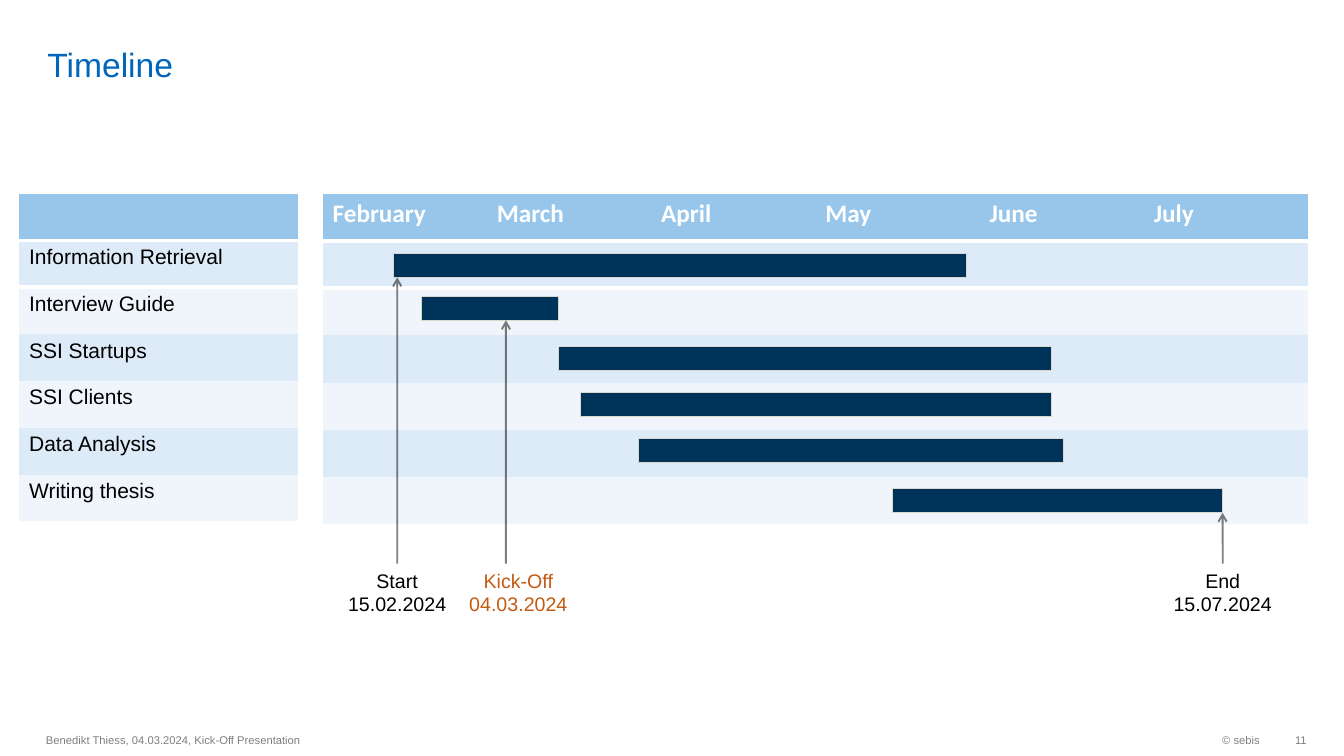
from dataclasses import dataclass

from lxml import etree
from pptx import Presentation
from pptx.dml import color
from pptx.enum import shapes, text
from pptx.oxml import ns
from pptx.util import Cm, Pt

# Content: places and sizes in centimetres
TITLE = "Timeline"
MONTHS = ["February", "March", "April", "May", "June", "July"]
TASKS = [  # name, bar left, bar top, bar width
    ("Information Retrieval", 9.91, 6.39, 14.45),
    ("Interview Guide", 10.62, 7.47, 3.45),
    ("SSI Startups", 14.07, 8.74, 12.42),
    ("SSI Clients", 14.62, 9.9, 11.88),
    ("Data Analysis", 16.08, 11.05, 10.72),
    ("Writing thesis", 22.5, 12.32, 8.31),
]
MILESTONES = [  # lines, label left, label width, arrow x, task pointed at, colour
    (["Start", "15.02.2024"], 8.36, 3.3, 10.01, 0, "ink"),
    (["End", "15.07.2024"], 28.95, 3.73, 30.81, 5, "ink"),
    (["Kick-Off 04.03.2024"], 11.2, 3.73, 12.75, 1, "accent"),
]
FOOTERS = [  # text, left, width, alignment, right inset
    ("© sebis", 26.06, 5.94, text.PP_ALIGN.RIGHT, 0.25),
    ("Benedikt Thiess, 04.03.2024, Kick-Off Presentation",
     0.91, 16, text.PP_ALIGN.LEFT, 0.25),
    ("11", 32, 0.93, text.PP_ALIGN.RIGHT, 0),
]

# Layout
TABLE_TOP = 4.88
BAR_HEIGHT = 0.6
LABEL_TOP = 14.2
PLAIN_TABLE = "{2D5ABB26-0587-4C30-8999-92F81FD0307C}"


@dataclass(frozen=True)
class Theme:
    font: str = "Arial"
    header_font: str = "Calibri"
    title: str = "0065BD"
    ink: str = "000000"
    accent: str = "C55A11"
    grey: str = "7F7F7F"
    white: str = "FFFFFF"
    header: str = "98C6EA"
    bands: tuple = ("DDEAF7", "EFF5FB")
    bar: str = "003359"
    bar_line: str = "DAD7CB"
    title_size: int = 24
    header_size: int = 18
    task_size: int = 15
    label_size: int = 14
    footer_size: int = 8


THEME = Theme()


def rgb(value):
    return color.RGBColor.from_string(value)


def style(frame, size, ink, align=text.PP_ALIGN.LEFT, name=THEME.font, bold=False):
    for para in frame.paragraphs:
        para.alignment = align
        for span in para.runs:
            font = span.font
            font.name, font.size, font.bold = name, Pt(size), bold
            font.color.rgb = rgb(ink)


def add_box(page, lines, left, top, width, height):
    box = page.shapes.add_textbox(Cm(left), Cm(top), Cm(width), Cm(height))
    box.text_frame.word_wrap = True
    box.text_frame.text = "\n".join(lines)
    return box


def add_border(cell, side, width):
    line = etree.SubElement(cell._tc.get_or_add_tcPr(), ns.qn(f"a:{side}"), w=str(Pt(width)))
    fill = etree.SubElement(line, ns.qn("a:solidFill"))
    etree.SubElement(fill, ns.qn("a:srgbClr"), val=THEME.white)


def add_grid(page, rows, left, column_width, row_height):
    """Banded table with a header row above a thick white rule."""
    count = len(rows[0])
    table = page.shapes.add_table(
        len(rows), count, Cm(left), Cm(TABLE_TOP),
        Cm(column_width * count), Cm(row_height * len(rows))).table
    table._tbl.tblPr.find(ns.qn("a:tableStyleId")).text = PLAIN_TABLE
    for index, values in enumerate(rows):
        table.rows[index].height = Cm(row_height)
        for column, value in enumerate(values):
            cell = table.cell(index, column)
            if value:
                cell.text = value
            if index == 0:
                add_border(cell, "lnB", 3)
                style(cell.text_frame, THEME.header_size, THEME.white,
                      name=THEME.header_font, bold=True)
            else:
                if index == 1:
                    add_border(cell, "lnT", 3)
                style(cell.text_frame, THEME.task_size, THEME.ink)
            cell.fill.solid()
            cell.fill.fore_color.rgb = rgb(THEME.bands[(index - 1) % 2] if index else THEME.header)


def add_bar(page, left, top, width):
    bar = page.shapes.add_shape(shapes.MSO_SHAPE.RECTANGLE,
                                Cm(left), Cm(top), Cm(width), Cm(BAR_HEIGHT))
    bar.shadow.inherit = False
    bar.fill.solid()
    bar.fill.fore_color.rgb = rgb(THEME.bar)
    bar.line.color.rgb = rgb(THEME.bar_line)
    bar.line.width = Pt(0.75)


def add_arrow(page, x, start, end):
    arrow = page.shapes.add_connector(shapes.MSO_CONNECTOR.STRAIGHT,
                                      Cm(x), Cm(start), Cm(x), Cm(end))
    arrow.line.color.rgb = rgb(THEME.ink)
    arrow.line.width = Pt(1.35)
    line = arrow.line._ln
    shade = line.find(".//" + ns.qn("a:srgbClr"))
    etree.SubElement(shade, ns.qn("a:alpha"), val="50000")
    etree.SubElement(line, ns.qn("a:tailEnd"), type="arrow")
    etree.SubElement(arrow._element.spPr, ns.qn("a:effectLst"))
    return arrow


def main():
    deck = Presentation()
    deck.slide_width, deck.slide_height = Cm(33.87), Cm(19.05)
    page = deck.slides.add_slide(deck.slide_layouts[5])

    # Title
    title = page.shapes.title
    title.left, title.top, title.width, title.height = Cm(0.94), Cm(0.13), Cm(29.41), Cm(2)
    frame = title.text_frame
    frame.text = TITLE
    frame.vertical_anchor = text.MSO_ANCHOR.BOTTOM
    frame.margin_top = frame.margin_bottom = 0
    style(frame, THEME.title_size, THEME.title)

    # Footer
    for words, left, width, align, inset in FOOTERS:
        frame = add_box(page, [words], left, 18.25, width, 0.81).text_frame
        frame.vertical_anchor = text.MSO_ANCHOR.MIDDLE
        frame.margin_right = Cm(inset)
        style(frame, THEME.footer_size, THEME.grey, align)

    # Month grid and task list
    add_grid(page, [MONTHS] + [[""] * len(MONTHS) for _ in TASKS], 8.13, 4.14, 1.19)
    add_grid(page, [[""]] + [[name] for name, *_ in TASKS], 0.48, 7.04, 1.18)

    # Task bars
    for _, left, top, width in TASKS:
        add_bar(page, left, top, width)

    # Milestones: an arrow from each label to the lower edge of its bar
    for lines, left, width, x, task, ink in MILESTONES:
        label = add_box(page, lines, left, LABEL_TOP, width, 1.45)
        style(label.text_frame, THEME.label_size, getattr(THEME, ink), text.PP_ALIGN.CENTER)
        arrow = add_arrow(page, x, LABEL_TOP, TASKS[task][2] + BAR_HEIGHT)
        if abs(left + width / 2 - x) < 0.01:
            arrow.begin_connect(label, 0)

    deck.save("out.pptx")


if __name__ == "__main__":
    main()
